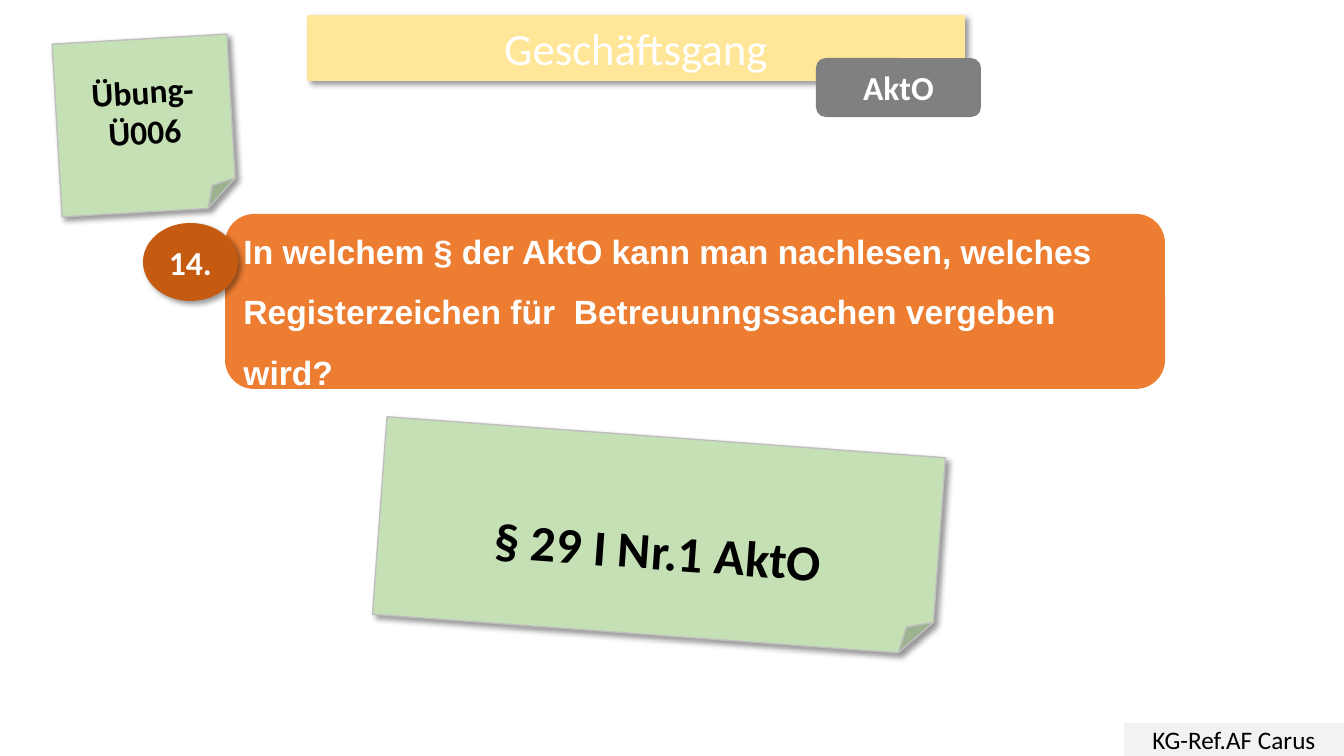
"""Build the exercise slide on the AktO with question, answer and labels."""
from lxml import etree
from pptx import Presentation
from pptx import util as u
from pptx.dml.color import RGBColor
from pptx.enum import shapes, text
from pptx.oxml import ns

SCALE = 914400 / 100.8
SHAPE = shapes.MSO_SHAPE


def px(*lengths):
    return [u.Emu(round(length * SCALE)) for length in lengths]


def style(box, fill, lines, size, color, bold=True, font="Calibri", shadow=True):
    box.fill.solid()
    box.fill.fore_color.rgb = RGBColor.from_string(fill)
    box.line.fill.background()
    box.shadow.inherit = False
    if shadow:
        effects = box._element.spPr.find(ns.qn("a:effectLst"))
        outer = etree.SubElement(effects, ns.qn("a:outerShdw"), blurRad="50800",
                                 dist="38100", dir="2700000", algn="tl", rotWithShape="0")
        tint = etree.SubElement(outer, ns.qn("a:srgbClr"), val="000000")
        etree.SubElement(tint, ns.qn("a:alpha"), val="40000")
    frame = box.text_frame
    frame.text = lines
    frame.word_wrap = True
    frame.auto_size = text.MSO_AUTO_SIZE.NONE
    frame.vertical_anchor = text.MSO_ANCHOR.MIDDLE
    for para in frame.paragraphs:
        para.alignment = text.PP_ALIGN.CENTER
        para.font.name = font
        para.font.size = u.Pt(size)
        para.font.bold = bold
        para.font.color.rgb = RGBColor.from_string(color)


deck = Presentation()
deck.slide_width, deck.slide_height = px(1344, 756)
page = deck.slides.add_slide(deck.slide_layouts[5])

title = page.shapes.title
title.left, title.top, title.width, title.height = px(307, 15, 658, 66)
outline = etree.SubElement(title._element.spPr, ns.qn("a:prstGeom"), prst="roundRect")
etree.SubElement(outline, ns.qn("a:avLst"))
style(title, "FFE699", "Geschäftsgang", 32, "FFFFFF", bold=False)

footer = page.shapes.add_shape(SHAPE.RECTANGLE, *px(1124, 723, 220, 33))
style(footer, "F2F2F2", "KG-Ref.AF Carus", 18, "000000", bold=False, shadow=False)

exercise = page.shapes.add_shape(SHAPE.FOLDED_CORNER, *px(57, 39, 175, 173))
style(exercise, "C5E0B4", "Übung-\nÜ006", 24, "000000")
exercise.rotation = 356.7

question = page.shapes.add_shape(SHAPE.ROUNDED_RECTANGLE, *px(225, 214, 940, 175))
style(question, "ED7D31", "In welchem § der AktO kann man nachlesen, welches Registerzeichen "
      "für  Betreuunngssachen vergeben wird?", 24, "FFFFFF", font="Arial", shadow=False)
question.text_frame.paragraphs[0].alignment = text.PP_ALIGN.LEFT
question.text_frame.paragraphs[0].line_spacing = 1.5

answer = page.shapes.add_shape(SHAPE.FOLDED_CORNER, *px(379, 437, 560, 198))
style(answer, "C5E0B4", "§ 29 I Nr.1 AktO", 36, "000000")
answer.rotation = 4.2
answer.text_frame.margin_top, = px(66)

for note in (exercise, answer):
    note.line.color.rgb = RGBColor.from_string("BFBFBF")
    note.line.width = u.Pt(1)

number = page.shapes.add_shape(SHAPE.FLOWCHART_CONNECTOR, *px(143, 223, 95, 78))
style(number, "C55A11", "14.", 24, "FFFFFF")

law = page.shapes.add_shape(SHAPE.ROUNDED_RECTANGLE, *px(816, 58, 165, 59))
style(law, "808080", "AktO", 24, "FFFFFF", shadow=False)

deck.save("out.pptx")
